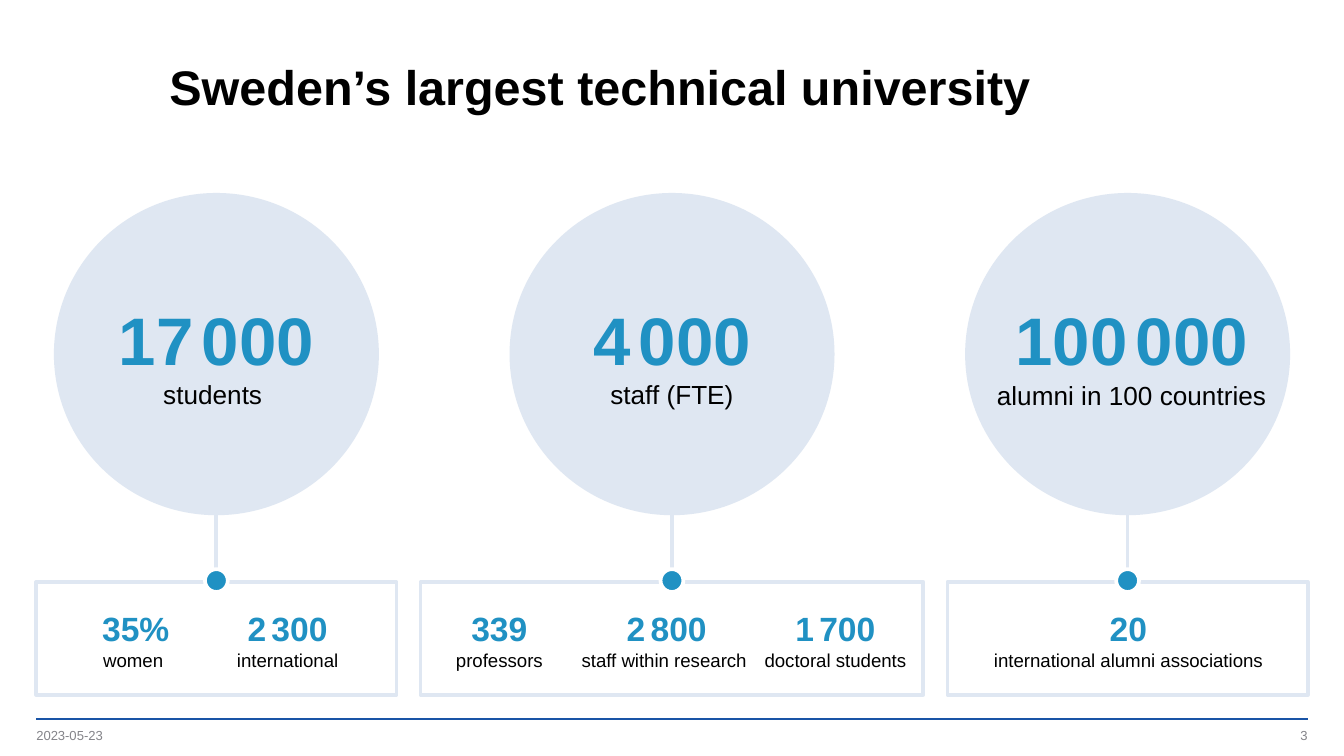
from lxml import etree
from pptx import Presentation
from pptx.dml.color import RGBColor
from pptx.enum import shapes, text
from pptx.oxml.ns import qn
from pptx.util import Inches, Pt

BLACK = RGBColor(0x00, 0x00, 0x00)
WHITE = RGBColor(0xFF, 0xFF, 0xFF)
GREY = RGBColor(0x84, 0x84, 0x89)
PALE = RGBColor(0xDF, 0xE7, 0xF2)
BLUE = RGBColor(0x20, 0x91, 0xC3)
NAVY = RGBColor(0x19, 0x54, 0xA6)

MARGIN, GAP = 0.27, 0.18
CIRCLE_W, CIRCLE_H = 2.39, 2.37
TOP, FRAME_TOP, FRAME_H = 1.45, 4.33, 0.84
DOT = 0.17

# Panel width, headline figure, its label, headline offset from the circle
# (None: inside the circle), and details: figure, label, left in panel, width
PANELS = [
    (2.68, "17 000", "students ", None,
     [("35%", "women ", 0.14, 1.2), ("2 300", "international", 1.27, 1.2)]),
    (3.74, "4 000", "staff (FTE)", None,
     [("339", "professors", 0.04, 1.09),
      ("2 800", "staff within research ", 1.02, 1.62),
      ("1 700", "doctoral students", 2.31, 1.55)]),
    (2.68, "100 000", "alumni in 100 countries", (0.12, 0.72, 2.21, 0.94),
     [("20", "international alumni associations", 0.57, 1.55)]),
]


def add_run(paragraph, words, size, color, bold=False):
    run = paragraph.add_run()
    run.text = words
    run.font.name = "Arial"
    run.font.size = Pt(size)
    run.font.bold = bold
    run.font.color.rgb = color


def add_figure(paragraph, figure, size, gap_size):
    """Write a number whose thousands gap is set in a smaller size."""
    thousands, gap, rest = figure.partition(" ")
    add_run(paragraph, thousands, size, BLUE, True)
    if gap:
        add_run(paragraph, gap, gap_size, BLUE, True)
        add_run(paragraph, rest, size, BLUE, True)


def prepare_frame(frame, wrap=False):
    frame.margin_left = frame.margin_right = 0
    frame.margin_top = frame.margin_bottom = 0
    frame.word_wrap = wrap
    frame.auto_size = text.MSO_AUTO_SIZE.NONE
    frame.vertical_anchor = text.MSO_ANCHOR.MIDDLE
    return frame


def add_text_frame(slide, left, top, width, height, wrap=False):
    box = slide.shapes.add_textbox(*map(Inches, (left, top, width, height)))
    return prepare_frame(box.text_frame, wrap)


def add_outlined(slide, kind, left, top, width, height, fill, line):
    shape = slide.shapes.add_shape(kind, *map(Inches, (left, top, width, height)))
    shape.shadow.inherit = False
    if fill is None:
        shape.fill.background()
    else:
        shape.fill.solid()
        shape.fill.fore_color.rgb = fill
    shape.line.color.rgb = line
    shape.line.width = Pt(2)
    return shape


def add_line(slide, x1, y1, x2, y2, color, width):
    line = slide.shapes.add_connector(
        shapes.MSO_CONNECTOR.STRAIGHT, *map(Inches, (x1, y1, x2, y2)))
    line.line.color.rgb = color
    line.line.width = Pt(width)
    etree.SubElement(line._element.spPr, qn("a:effectLst"))
    return line


def add_title(slide, left, top, width, height):
    title = slide.shapes.title
    title.left, title.top = Inches(left), Inches(top)
    title.width, title.height = Inches(width), Inches(height)
    frame = title.text_frame
    frame.auto_size = text.MSO_AUTO_SIZE.NONE
    frame.vertical_anchor = text.MSO_ANCHOR.MIDDLE
    heading = frame.paragraphs[0]
    heading.alignment = text.PP_ALIGN.LEFT
    heading.line_spacing = Pt(30)
    add_run(heading, "Sweden’s largest technical university", 26, BLACK, True)


def add_headline(slide, circle, left, figure, label, offset):
    if offset:
        dx, dy, width, height = offset
        frame = add_text_frame(slide, left + dx, TOP + dy, width, height)
    else:
        frame = prepare_frame(circle.text_frame)
    headline = frame.paragraphs[0]
    headline.alignment = text.PP_ALIGN.CENTER
    add_figure(headline, figure, 36, 16)
    # The free-standing headline has its label as a paragraph of its own
    if offset:
        caption = frame.add_paragraph()
        caption.alignment = text.PP_ALIGN.CENTER
    else:
        caption = headline
        caption.add_line_break()
    add_run(caption, label, 14, BLACK)


def add_detail(slide, left, top, width, figure, label):
    frame = add_text_frame(slide, left, top, width, 0.64)
    number, caption = frame.paragraphs[0], frame.add_paragraph()
    number.alignment = caption.alignment = text.PP_ALIGN.CENTER
    add_figure(number, figure, 18, 10)
    add_run(caption, label, 10, BLACK)


def add_panel(slide, left, width, figure, label, offset, details):
    center = left + width / 2
    oval = shapes.MSO_SHAPE.OVAL

    # Circle with the headline figure
    circle_left = center - CIRCLE_W / 2
    circle = add_outlined(slide, oval, circle_left, TOP, CIRCLE_W, CIRCLE_H, PALE, PALE)
    add_headline(slide, circle, circle_left, figure, label, offset)

    # Framed details
    frame = add_outlined(slide, shapes.MSO_SHAPE.RECTANGLE,
                         left, FRAME_TOP, width, FRAME_H, None, PALE)
    for number, caption, dx, detail_width in details:
        add_detail(slide, left + dx, FRAME_TOP + 0.11, detail_width, number, caption)

    # Stem and dot joining the two
    stem = add_line(slide, center, 3.46, center, FRAME_TOP, PALE, 2)
    stem.end_connect(frame, 0)
    add_outlined(slide, oval, center - DOT / 2, FRAME_TOP - 0.01 - DOT / 2,
                 DOT, DOT, BLUE, WHITE)


def add_footer(slide, left, top, width):
    add_line(slide, left, top, left + width, top, NAVY, 1)
    entry_width = 2.25
    for words, x, alignment in (
            ("2023-05-23", left, text.PP_ALIGN.LEFT),
            ("3", left + width - entry_width, text.PP_ALIGN.RIGHT)):
        entry = add_text_frame(slide, x, top + 0.06, entry_width, 0.13, True).paragraphs[0]
        entry.alignment = alignment
        add_run(entry, words, 7, GREY)


def main():
    prs = Presentation()
    prs.slide_width = Inches(10)
    prs.slide_height = prs.slide_width * 9 // 16
    slide = prs.slides.add_slide(prs.slide_layouts[5])

    add_title(slide, 1.16, 0.28, 8.26, 0.74)
    left = MARGIN
    for width, figure, label, offset, details in PANELS:
        add_panel(slide, left, width, figure, label, offset, details)
        left += width + GAP
    add_footer(slide, MARGIN, 5.35, 10 - 2 * MARGIN)

    prs.save("out.pptx")


if __name__ == "__main__":
    main()
